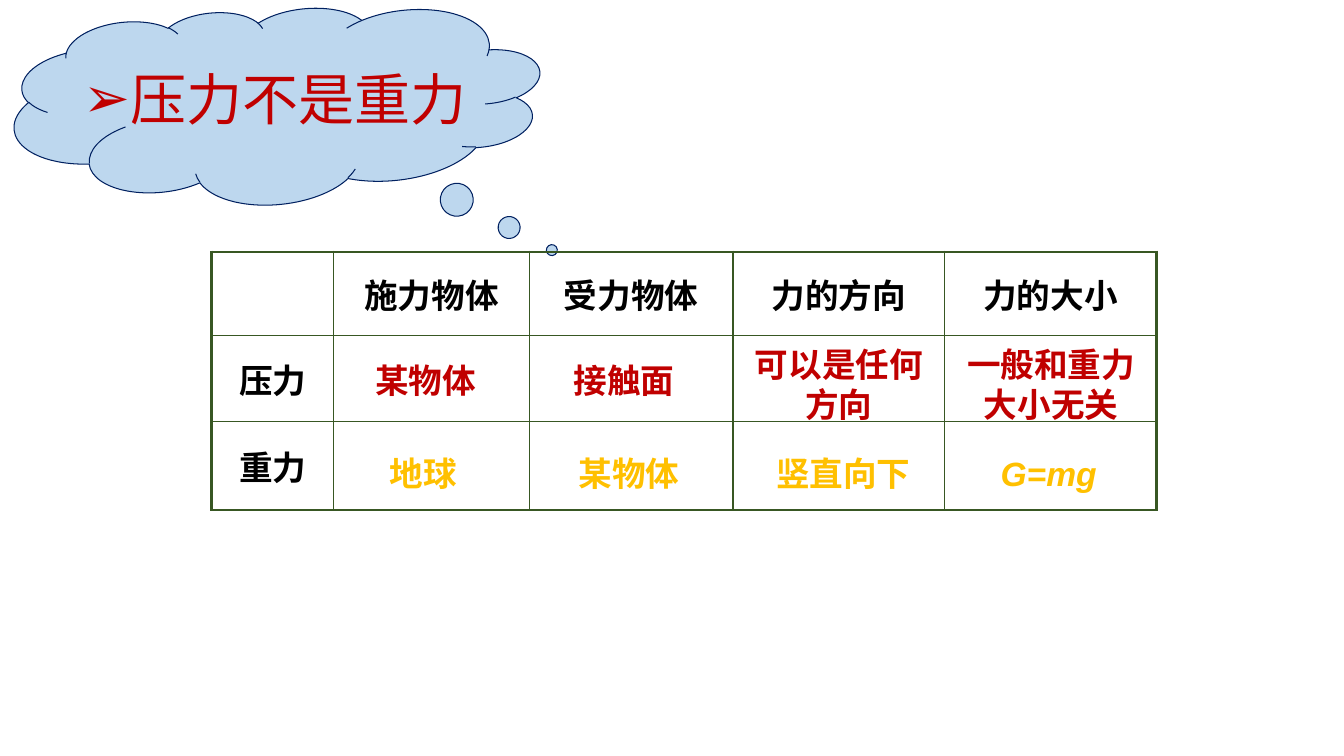
from dataclasses import dataclass

from lxml import etree
from pptx import Presentation
from pptx.dml.color import RGBColor
from pptx.enum.shapes import MSO_SHAPE
from pptx.enum.text import MSO_ANCHOR, MSO_AUTO_SIZE, PP_ALIGN
from pptx.oxml.ns import qn
from pptx.slide import Slide
from pptx.table import _Cell as Cell
from pptx.text.text import _Paragraph as Paragraph
from pptx.util import Inches, Pt

CLOUD = MSO_SHAPE.CLOUD_CALLOUT
MIDDLE = MSO_ANCHOR.MIDDLE
TOP = MSO_ANCHOR.TOP
FIT_SHAPE = MSO_AUTO_SIZE.SHAPE_TO_FIT_TEXT
CENTER = PP_ALIGN.CENTER
LEFT = PP_ALIGN.LEFT

BLACK = RGBColor(0x00, 0x00, 0x00)
RED = RGBColor(0xC0, 0x00, 0x00)
GOLD = RGBColor(0xFF, 0xC0, 0x00)
GREEN = RGBColor(0x38, 0x57, 0x23)
NAVY = RGBColor(0x00, 0x20, 0x60)
PALE_BLUE = RGBColor(0xBD, 0xD7, 0xEE)

BODY_FONT = "Arial"
TITLE_FONT = "Noto Sans CJK JP"
OUTER_BORDER = Pt(2.25)
INNER_BORDER = Pt(1)

COLUMN_WIDTHS = (1.21, 1.94, 2.02, 2.1, 2.1)
ROW_HEIGHTS = (0.83, 0.85, 0.88)
HEADINGS = ("", "施力物体", "受力物体", "力的方向", "力的大小")
ROW_LABELS = ("", "压力", "重力")


@dataclass(frozen=True)
class Answer:
    text: str
    left: float
    top: float
    width: float
    height: float
    color: RGBColor
    italic: bool = False


ANSWERS = (
    Answer("地球", 3.44, 4.44, 1.52, 0.5, GOLD),
    Answer("某物体", 5.19, 4.44, 2.1, 0.5, GOLD),
    Answer("某物体", 3.18, 3.52, 2.08, 0.5, RED),
    Answer("接触面", 5.19, 3.52, 2, 0.5, RED),
    Answer("可以是任何方向", 7.36, 3.36, 1.92, 0.91, RED),
    Answer("竖直向下", 7.28, 4.44, 2.17, 0.5, GOLD),
    Answer("一般和重力大小无关", 9.4, 3.36, 2.05, 0.91, RED),
    Answer("G=mg", 9.44, 4.44, 1.92, 0.5, GOLD, italic=True),
)


def add_bold_run(paragraph: Paragraph, text: str, color: RGBColor, italic: bool = False) -> None:
    paragraph.alignment = CENTER
    run = paragraph.add_run()
    run.text = text
    run.font.name = BODY_FONT
    run.font.size = Pt(24)
    run.font.bold = True
    run.font.italic = italic
    run.font.color.rgb = color


def add_title(slide: Slide) -> None:
    title = slide.shapes.title
    title.left, title.top = Inches(0.73), Inches(0.46)
    title.width, title.height = Inches(4.13), Inches(0.91)
    frame = title.text_frame
    frame.word_wrap = True
    frame.auto_size = FIT_SHAPE
    frame.vertical_anchor = TOP
    paragraph = frame.paragraphs[0]
    paragraph.alignment = LEFT
    paragraph.line_spacing = 1.2
    properties = paragraph._p.get_or_add_pPr()
    properties.set("marL", "0")
    properties.set("indent", "0")
    etree.SubElement(properties, qn("a:buFont"), typeface=BODY_FONT)
    etree.SubElement(properties, qn("a:buChar"), char="➢")
    run = paragraph.add_run()
    run.text = "压力不是重力"
    run.font.size = Pt(40)
    run.font.color.rgb = RED
    run.font.name = TITLE_FONT
    etree.SubElement(run.font._element, qn("a:ea"), typeface=TITLE_FONT)


def add_cloud(slide: Slide) -> None:
    cloud = slide.shapes.add_shape(CLOUD, Inches(0.13), Inches(0.06), Inches(5.24), Inches(1.96))
    cloud.shadow.inherit = False
    cloud.rotation = 354
    cloud.element.spPr.find(qn("a:xfrm")).set("flipH", "1")
    cloud.adjustments[0] = -0.488
    cloud.adjustments[1] = 0.877
    cloud.fill.solid()
    cloud.fill.fore_color.rgb = PALE_BLUE
    cloud.line.color.rgb = NAVY
    cloud.line.width = Pt(0.75)
    slide.shapes.title.element.addprevious(cloud.element)


def add_border(cell: Cell, side: str, width: int) -> None:
    properties = cell._tc.get_or_add_tcPr()
    line = etree.SubElement(properties, qn(f"a:ln{side}"), w=str(width))
    fill = etree.SubElement(line, qn("a:solidFill"))
    etree.SubElement(fill, qn("a:srgbClr"), val=str(GREEN))


def fill_cell(cell: Cell, text: str) -> None:
    cell.vertical_anchor = MIDDLE
    paragraph = cell.text_frame.paragraphs[0]
    add_bold_run(paragraph, text, BLACK)
    spacing = etree.SubElement(paragraph._p.get_or_add_pPr(), qn("a:spcBef"))
    etree.SubElement(spacing, qn("a:spcPct"), val="20000")


def add_force_table(slide: Slide) -> None:
    row_count, column_count = len(ROW_HEIGHTS), len(COLUMN_WIDTHS)
    table = slide.shapes.add_table(
        row_count, column_count, Inches(2.1), Inches(2.5),
        Inches(sum(COLUMN_WIDTHS)), Inches(sum(ROW_HEIGHTS)),
    ).table
    table.first_row = False
    table.horz_banding = False
    for column, width in zip(table.columns, COLUMN_WIDTHS):
        column.width = Inches(width)
    for row, height in zip(table.rows, ROW_HEIGHTS):
        row.height = Inches(height)
    for row_index in range(row_count):
        for column_index in range(column_count):
            cell = table.cell(row_index, column_index)
            outer_sides = {
                "L": column_index == 0,
                "R": column_index == column_count - 1,
                "T": row_index == 0,
                "B": row_index == row_count - 1,
            }
            for side, is_outer in outer_sides.items():
                add_border(cell, side, OUTER_BORDER if is_outer else INNER_BORDER)
            cell.fill.background()
            text = ""
            if row_index == 0:
                text = HEADINGS[column_index]
            elif column_index == 0:
                text = ROW_LABELS[row_index]
            if text:
                fill_cell(cell, text)


def add_answer(slide: Slide, answer: Answer) -> None:
    box = slide.shapes.add_textbox(
        Inches(answer.left), Inches(answer.top), Inches(answer.width), Inches(answer.height)
    )
    frame = box.text_frame
    frame.word_wrap = True
    frame.auto_size = FIT_SHAPE
    add_bold_run(frame.paragraphs[0], answer.text, answer.color, answer.italic)


def main() -> None:
    presentation = Presentation()
    presentation.slide_width = Inches(13.33)
    presentation.slide_height = Inches(7.5)
    slide = presentation.slides.add_slide(presentation.slide_layouts[5])
    add_title(slide)
    add_cloud(slide)
    add_force_table(slide)
    for answer in ANSWERS:
        add_answer(slide, answer)
    presentation.save("out.pptx")


if __name__ == "__main__":
    main()
